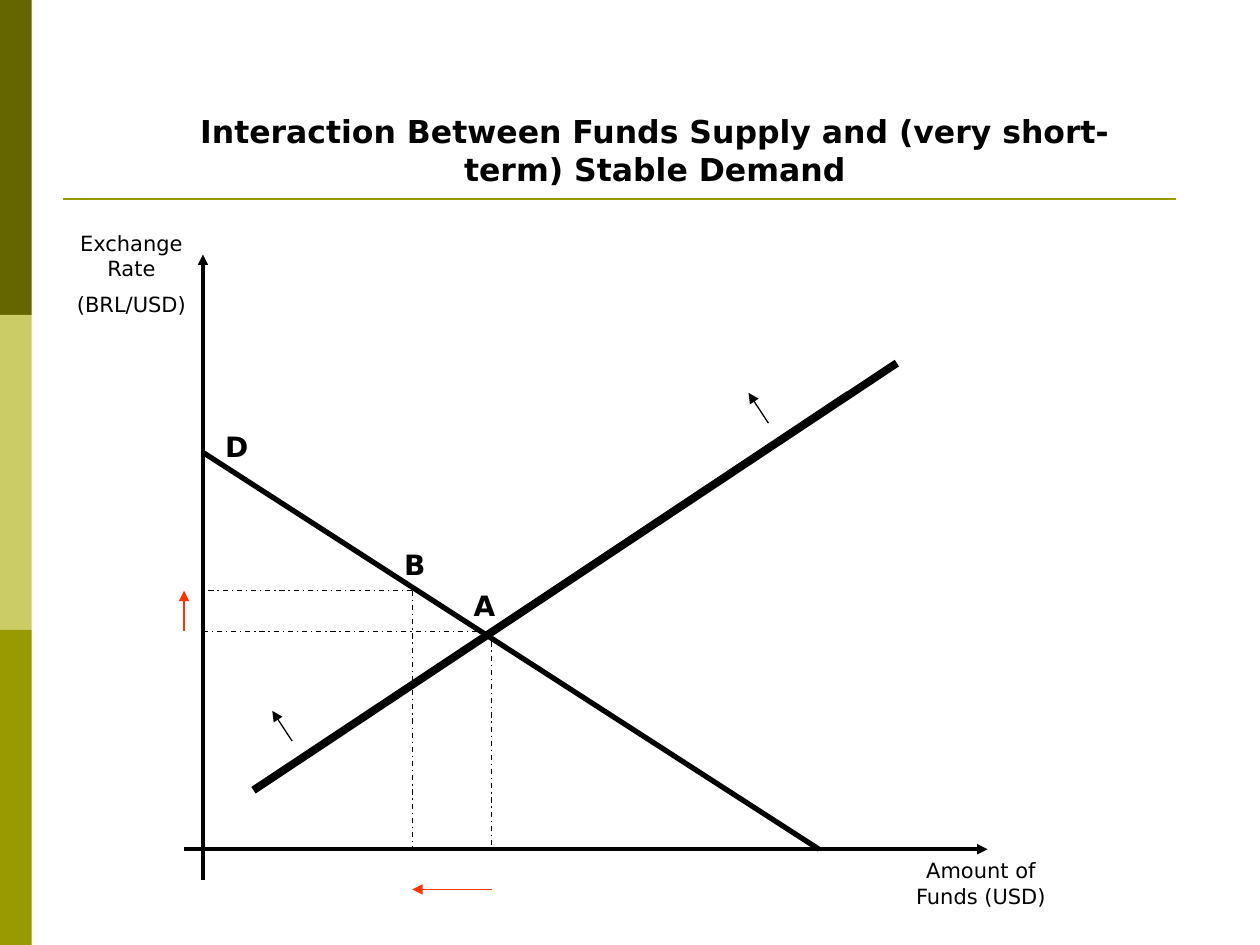
"""Build a slide on funds supply shifting against a stable short-term demand."""
from dataclasses import dataclass

from lxml.etree import SubElement
from pptx import Presentation
from pptx.dml.color import RGBColor
from pptx.enum.dml import MSO_LINE
from pptx.enum.shapes import MSO_CONNECTOR, MSO_SHAPE
from pptx.enum.text import MSO_ANCHOR, MSO_AUTO_SIZE, PP_ALIGN
from pptx.oxml.ns import qn
from pptx.util import Cm, Pt


@dataclass(frozen=True)
class Theme:
    font: str = "DejaVu Sans"
    ink: RGBColor = RGBColor(0x00, 0x00, 0x00)
    shift: RGBColor = RGBColor(0xFF, 0x33, 0x00)
    dark_olive: RGBColor = RGBColor(0x66, 0x66, 0x00)
    pale_olive: RGBColor = RGBColor(0xCC, 0xCC, 0x66)
    olive: RGBColor = RGBColor(0x99, 0x99, 0x00)
    title_size: Pt = Pt(18)
    point_size: Pt = Pt(16)
    axis_size: Pt = Pt(12)


theme = Theme()
deck = Presentation()
deck.slide_width, deck.slide_height = Cm(25.4), Cm(19.05)
slide = deck.slides.add_slide(deck.slide_layouts[5])


def draw_line(start, end, width, color=theme.ink, dash=None, arrow=False):
    ends = [Cm(value) for value in (*start, *end)]
    connector = slide.shapes.add_connector(MSO_CONNECTOR.STRAIGHT, *ends)
    connector.line.color.rgb = color
    connector.line.width = Pt(width)
    if dash:
        connector.line.dash_style = dash
    properties = connector._element.spPr
    if arrow:
        SubElement(properties.find(qn("a:ln")), qn("a:tailEnd"), type="triangle")
    SubElement(properties, qn("a:effectLst"))


def write_text(frame, lines, size, bold=False, align=PP_ALIGN.CENTER):
    frame.word_wrap = True
    frame.auto_size = MSO_AUTO_SIZE.NONE
    frame.vertical_anchor = MSO_ANCHOR.TOP
    frame.text = "\n".join(lines)
    for index, paragraph in enumerate(frame.paragraphs):
        paragraph.alignment = align
        paragraph.space_before = Pt(6 if index else 0)
        paragraph.font.name = theme.font
        paragraph.font.size = size
        paragraph.font.bold = bold
        paragraph.font.color.rgb = theme.ink


band_height = deck.slide_height // 3
for index, color in enumerate((theme.dark_olive, theme.pale_olive, theme.olive)):
    band = slide.shapes.add_shape(
        MSO_SHAPE.RECTANGLE, 0, index * band_height, Cm(0.64), band_height)
    band.shadow.inherit = False
    band.fill.solid()
    band.fill.fore_color.rgb = color
    band.line.fill.background()

draw_line((1.27, 4.01), (23.7, 4.01), 1.5, theme.olive)

heading = slide.shapes.title
heading.left, heading.top, heading.width, heading.height = (
    Cm(2.9), Cm(2.13), Cm(20.6), Cm(1.8))
write_text(
    heading.text_frame,
    ["Interaction Between Funds Supply and (very short-term) Stable Demand"],
    theme.title_size, bold=True)

axis_x, axis_y = 4.09, 17.12
draw_line((axis_x, 5.33), (axis_x, 17.73), 2.25)
draw_line((3.71, axis_y), (19.71, axis_y), 2.25)
draw_line((axis_x, 5.92), (axis_x, 5.13), 0.75, arrow=True)
draw_line((19.3, axis_y), (19.91, axis_y), 0.75, arrow=True)

draw_line((axis_x, 9.12), (16.51, axis_y), 3)
draw_line((6.3, 15.11), (17.09, 7.92), 2.25)
draw_line((5.11, 15.93), (18.08, 7.32), 4.5)

old_amount, old_rate = 9.91, 12.73
new_amount, new_rate = 8.31, 11.91
for amount, rate, drop_start in (
        (old_amount, old_rate, 12.93), (new_amount, new_rate, new_rate)):
    draw_line((amount, drop_start), (amount, axis_y), 0.75, dash=MSO_LINE.DASH_DOT)
    draw_line((amount, rate), (axis_x, rate), 0.75, dash=MSO_LINE.DASH_DOT)

draw_line((old_amount, 17.93), (new_amount, 17.93), 0.75, theme.shift, arrow=True)
draw_line((3.71, old_rate), (3.71, new_rate), 0.75, theme.shift, arrow=True)
for x, y in ((5.89, 14.94), (15.49, 8.53)):
    draw_line((x, y), (x - 0.4, y - 0.61), 0.75, arrow=True)

for letter, left, top in (("D", 4.29, 8.53), ("B", 7.9, 10.92), ("A", 9.3, 11.73)):
    point = slide.shapes.add_textbox(Cm(left), Cm(top), Cm(0.81), Cm(0.94))
    write_text(point.text_frame, [letter], theme.point_size, True, PP_ALIGN.LEFT)

for lines, left, top, width, height in (
        (["Exchange Rate", "(BRL/USD)"], 1.19, 4.52, 2.92, 2.06),
        (["Amount of Funds (USD)"], 18.11, 17.17, 3.33, 1.3)):
    axis_label = slide.shapes.add_textbox(Cm(left), Cm(top), Cm(width), Cm(height))
    write_text(axis_label.text_frame, lines, theme.axis_size)

deck.save("out.pptx")
